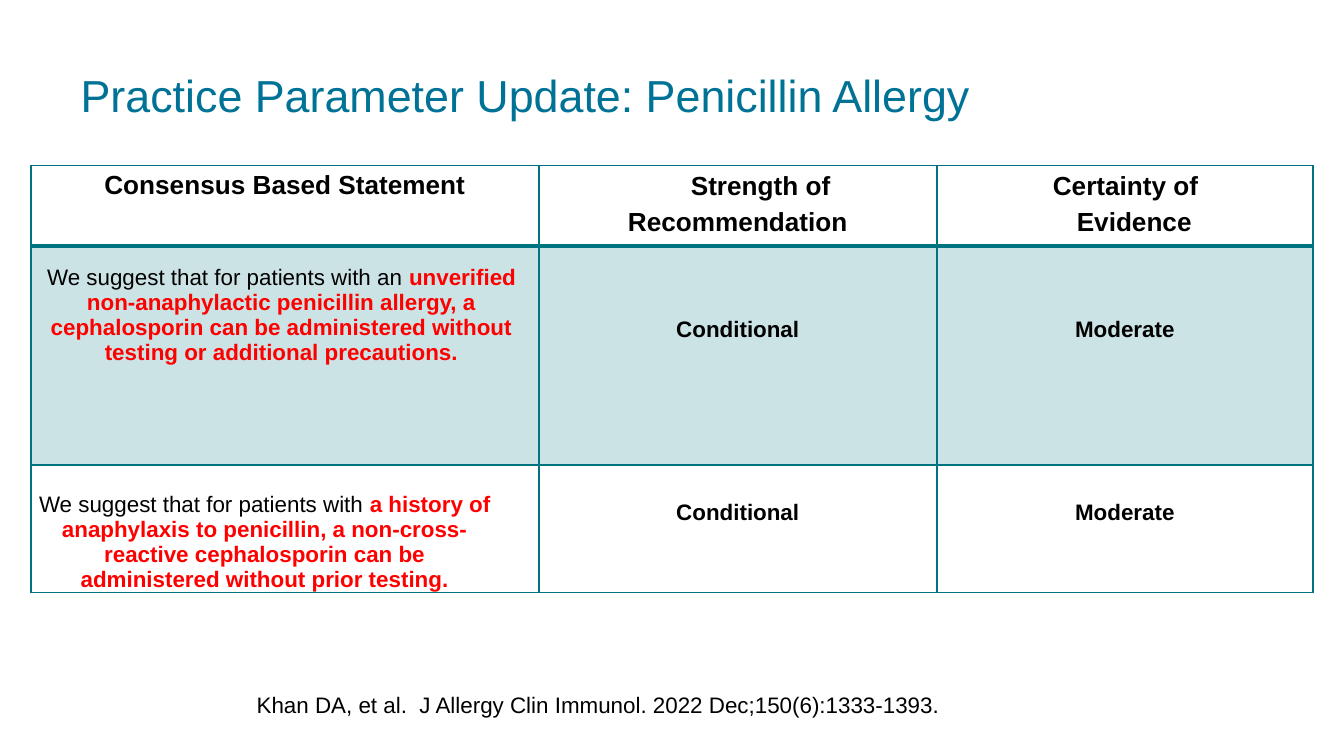
from lxml.etree import SubElement
from pptx import Presentation
from pptx.dml.color import RGBColor
from pptx.enum.text import MSO_ANCHOR, PP_ALIGN
from pptx.oxml.ns import qn
from pptx.util import Inches, Pt

TEAL, TITLE_BLUE, RED, BLACK = "007380", "007296", "FF0000", "000000"
THIN, THICK = 1, 2.25


def rgb(color):
    return RGBColor.from_string(color)


def add_text(paragraph, text, size=12, color=BLACK, bold=False):
    run = paragraph.add_run()
    run.text = text
    run.font.name = "Arial"
    run.font.size = Pt(size)
    run.font.bold = bold
    run.font.color.rgb = rgb(color)


def set_borders(cell, top, bottom):
    properties = cell._tc.get_or_add_tcPr()
    for side, width in (("L", THIN), ("R", THIN), ("T", top), ("B", bottom)):
        line = SubElement(properties, qn(f"a:ln{side}"), w=str(Pt(width)))
        fill = SubElement(line, qn("a:solidFill"))
        SubElement(fill, qn("a:srgbClr"), val=TEAL)


def set_fill(cell, tinted):
    if not tinted:
        cell.fill.background()
        return
    cell.fill.solid()
    cell.fill.fore_color.rgb = rgb(TEAL)
    color = cell._tc.tcPr.find(qn("a:solidFill")).find(qn("a:srgbClr"))
    SubElement(color, qn("a:alpha"), val="20000")


def fill_cell(cell, runs, size=12, top=0, right=0, left=0, first=0, spacing=None):
    """Write (text, color, bold) runs, centred between the given insets."""
    cell.margin_left = cell.margin_bottom = 0
    cell.margin_top, cell.margin_right = Inches(top), Inches(right)
    paragraph = cell.text_frame.paragraphs[0]
    paragraph.alignment = PP_ALIGN.CENTER
    if spacing:
        paragraph.line_spacing = Pt(spacing)
    indents = paragraph._p.get_or_add_pPr()
    indents.set("marL", str(Inches(left)))
    indents.set("indent", str(Inches(first)))
    for text, color, bold in runs:
        add_text(paragraph, text, size=size, color=color, bold=bold)


def add_title(slide, left, top, width, height):
    title = slide.shapes.title
    title.left, title.top = Inches(left), Inches(top)
    title.width, title.height = Inches(width), Inches(height)
    title.text_frame.vertical_anchor = MSO_ANCHOR.MIDDLE
    paragraph = title.text_frame.paragraphs[0]
    paragraph.alignment = PP_ALIGN.LEFT
    add_text(paragraph, "Practice Parameter Update: Penicillin Allergy",
             size=24, color=TITLE_BLUE)


def add_recommendations(slide, left, top, column_widths, row_heights):
    table = slide.shapes.add_table(
        len(row_heights), len(column_widths), Inches(left), Inches(top),
        Inches(sum(column_widths)), Inches(sum(row_heights))).table
    table.first_row = table.horz_banding = False
    for column, width in zip(table.columns, column_widths):
        column.width = Inches(width)
    for row, height in zip(table.rows, row_heights):
        row.height = Inches(height)

    # Header row
    headers = [
        ("Consensus Based Statement", dict(spacing=18.8)),
        ("Strength of Recommendation",
         dict(spacing=19.2, left=0.42, first=0.34, right=0.42)),
        ("Certainty of Evidence",
         dict(spacing=19.2, left=0.6, first=-0.13, right=0.46)),
    ]
    for column, (text, layout) in enumerate(headers):
        fill_cell(table.cell(0, column), [(text, BLACK, True)], size=14, **layout)

    # Statements: lead, emphasis, strength, certainty, insets, top of the ratings
    statements = [
        ("We suggest that for patients with an ",
         "unverified non-anaphylactic penicillin allergy, a cephalosporin can be "
         "administered without testing or additional precautions.",
         "Conditional", "Moderate", dict(top=0.14, right=0.11), 0.53),
        ("We suggest that for patients with ",
         "a history of anaphylaxis to penicillin, a non-cross- reactive "
         "cephalosporin can be administered without prior testing.",
         "Conditional", "Moderate", dict(top=0.2, right=0.36), 0.26),
    ]
    for row, (lead, emphasis, strength, certainty, insets, rating_top) in enumerate(
            statements, start=1):
        fill_cell(table.cell(row, 0),
                  [(lead, BLACK, False), (emphasis, RED, True)], left=0.06, **insets)
        for column, rating in enumerate((strength, certainty), start=1):
            fill_cell(table.cell(row, column), [(rating, BLACK, True)], top=rating_top)

    # Borders and the tint of the first statement
    for row in range(len(row_heights)):
        for column in range(len(column_widths)):
            cell = table.cell(row, column)
            set_borders(cell, top=THICK if row == 1 else THIN,
                        bottom=THICK if row == 0 else THIN)
            set_fill(cell, tinted=row == 1)


def add_citation(slide, left, top, width, height):
    citation = slide.shapes.add_textbox(
        Inches(left), Inches(top), Inches(width), Inches(height))
    citation.text_frame.word_wrap = True
    paragraph = citation.text_frame.paragraphs[0]
    paragraph.alignment = PP_ALIGN.RIGHT
    add_text(paragraph,
             "Khan DA, et al.  J Allergy Clin Immunol. 2022 Dec;150(6):1333-1393. ")


def main():
    presentation = Presentation()
    # Widescreen, 16:9
    presentation.slide_width = Inches(10)
    presentation.slide_height = Inches(10) * 9 // 16
    slide = presentation.slides.add_slide(presentation.slide_layouts[5])
    add_title(slide, 0.5, 0.23, 9, 0.94)
    add_recommendations(slide, 0.23, 1.23, [3.78, 2.96, 2.8], [0.6, 1.63, 0.95])
    add_citation(slide, 0.36, 5.09, 6.78, 0.3)
    presentation.save("out.pptx")


if __name__ == "__main__":
    main()
